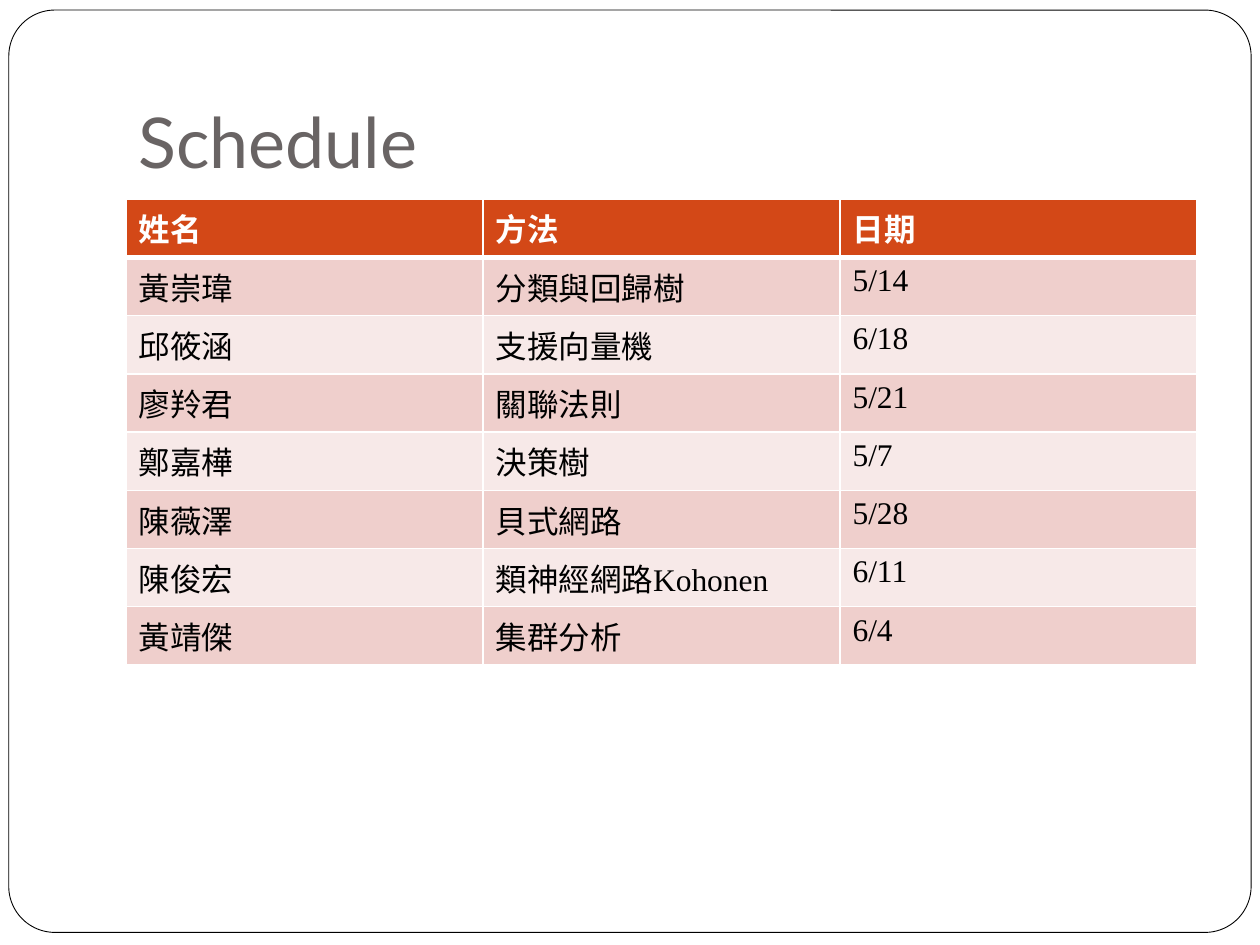
from lxml import etree
from pptx import Presentation
from pptx.dml.color import RGBColor
from pptx.enum.shapes import MSO_SHAPE
from pptx.enum.text import MSO_ANCHOR, PP_ALIGN
from pptx.oxml.ns import qn
from pptx.util import Inches, Pt

ROUNDED = MSO_SHAPE.ROUNDED_RECTANGLE
BOTTOM = MSO_ANCHOR.BOTTOM
LEFT = PP_ALIGN.LEFT
TITLE_ONLY = 5

COLORS = {
    "white": "FFFFFF",
    "black": "000000",
    "title": "696464",
    "header": "D34817",
    "odd": "EFCFCC",
    "even": "F7E9E8",
}

SCHEDULE = [
    ("姓名", "方法", "日期"),
    ("黃崇瑋", "分類與回歸樹", "5/14"),
    ("邱筱涵", "支援向量機", "6/18"),
    ("廖羚君", "關聯法則", "5/21"),
    ("鄭嘉樺", "決策樹", "5/7"),
    ("陳薇澤", "貝式網路", "5/28"),
    ("陳俊宏", "類神經網路Kohonen", "6/11"),
    ("黃靖傑", "集群分析", "6/4"),
]


def rgb(name):
    return RGBColor.from_string(COLORS[name])


class SlideBuilder:
    title_font = "Lato"
    body_font = "Times New Roman"

    def __init__(self, slide):
        self.slide = slide

    def style(self, paragraph, font, size, color, bold=False):
        paragraph.font.name = font
        paragraph.font.size = Pt(size)
        paragraph.font.bold = bold
        paragraph.font.color.rgb = rgb(color)

    def frame(self, left, top, width, height):
        frame = self.slide.shapes.add_shape(
            ROUNDED, Inches(left), Inches(top), Inches(width), Inches(height))
        frame.adjustments[0] = 0.05
        frame.shadow.inherit = False
        frame.fill.solid()
        frame.fill.fore_color.rgb = rgb("white")
        frame.line.color.rgb = rgb("black")
        frame.line.width = Pt(0.5)
        self.slide.shapes._spTree.insert(2, frame._element)

    def title(self, text, left, top, width, height):
        title = self.slide.shapes.title
        title.left, title.top = Inches(left), Inches(top)
        title.width, title.height = Inches(width), Inches(height)
        body = title.text_frame
        body.text = text
        body.vertical_anchor = BOTTOM
        body.margin_bottom = Inches(0.1)
        heading = body.paragraphs[0]
        heading.alignment = LEFT
        self.style(heading, self.title_font, 40, "title")

    def border(self, cell, side, points):
        line = etree.SubElement(
            cell._tc.get_or_add_tcPr(), qn(f"a:ln{side}"), w=str(Pt(points)))
        fill = etree.SubElement(line, qn("a:solidFill"))
        etree.SubElement(fill, qn("a:srgbClr"), val=COLORS["white"])

    def cell(self, cell, text, row):
        is_header = row == 0
        widths = {"L": 1, "R": 1, "T": 3 if row == 1 else 1, "B": 3 if is_header else 1}
        for side, points in widths.items():
            self.border(cell, side, points)
        cell.fill.solid()
        band = "odd" if row % 2 else "even"
        cell.fill.fore_color.rgb = rgb("header" if is_header else band)
        cell.text = text
        self.style(cell.text_frame.paragraphs[0], self.body_font, 18,
                   "white" if is_header else "black", is_header)

    def table(self, rows, left, top, width, height):
        table = self.slide.shapes.add_table(
            len(rows), len(rows[0]), Inches(left), Inches(top),
            Inches(width), Inches(height)).table
        for r, values in enumerate(rows):
            for c, text in enumerate(values):
                self.cell(table.cell(r, c), text, r)


def main():
    deck = Presentation()
    deck.slide_width, deck.slide_height = Inches(10), Inches(7.5)
    builder = SlideBuilder(deck.slides.add_slide(deck.slide_layouts[TITLE_ONLY]))
    builder.frame(0.07, 0.08, 9.86, 7.32)
    builder.title("Schedule", 1, 0.3, 8.5, 1.25)
    builder.table(SCHEDULE, 1, 1.58, 8.5, 3.24)
    deck.save("out.pptx")


if __name__ == "__main__":
    main()
